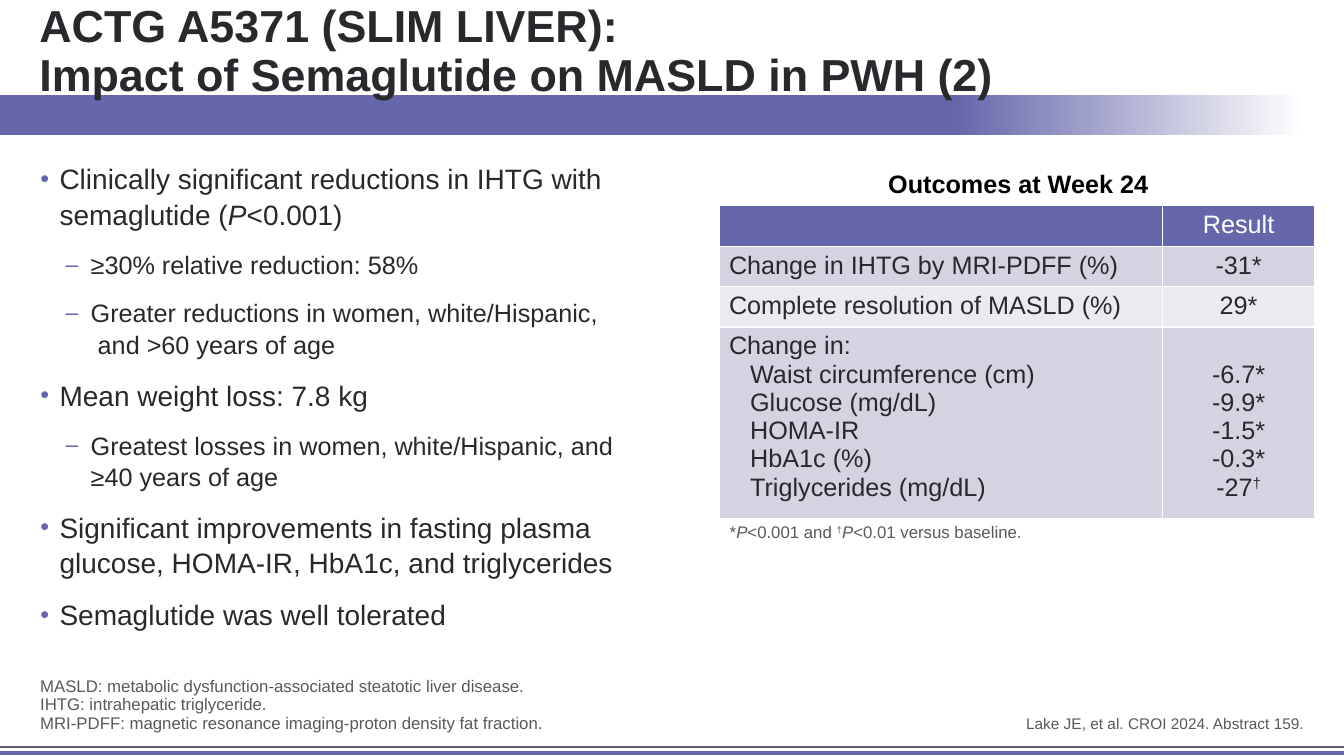
from dataclasses import dataclass
from typing import NamedTuple

from lxml import etree
from pptx import Presentation
from pptx.dml.color import RGBColor
from pptx.enum.shapes import MSO_CONNECTOR, MSO_SHAPE
from pptx.enum.text import MSO_ANCHOR, MSO_AUTO_SIZE, PP_ALIGN
from pptx.oxml.ns import qn
from pptx.util import Emu, Inches, Pt

LEFT, CENTER, RIGHT = PP_ALIGN.LEFT, PP_ALIGN.CENTER, PP_ALIGN.RIGHT
RECTANGLE, STRAIGHT = MSO_SHAPE.RECTANGLE, MSO_CONNECTOR.STRAIGHT
BOTTOM, TOP, NO_FIT = MSO_ANCHOR.BOTTOM, MSO_ANCHOR.TOP, MSO_AUTO_SIZE.NONE

WHITE = RGBColor(0xFF, 0xFF, 0xFF)
BLACK = RGBColor(0x00, 0x00, 0x00)
INK = RGBColor(0x29, 0x28, 0x2D)
GREY = RGBColor(0x59, 0x59, 0x59)
RULE_GREY = RGBColor(0x62, 0x5C, 0x60)
PURPLE = RGBColor(0x66, 0x67, 0xAB)
LILAC = RGBColor(0xD3, 0xD3, 0xE2)
PALE = RGBColor(0xEA, 0xEB, 0xF1)

FONT = "Arial"
WIDTH, HEIGHT = Inches(13.33), Inches(7.5)


class Box(NamedTuple):
    """Place and size in percent of the slide's width and height."""
    left: float
    top: float
    width: float
    height: float


class Span(NamedTuple):
    text: str
    italic: bool = False
    raised: bool = False


class Bullet(NamedTuple):
    level: int
    sign: str
    margin: float
    hang: float
    size: int


@dataclass(frozen=True)
class Style:
    size: int
    color: RGBColor = INK
    bold: bool = False
    align: PP_ALIGN = LEFT
    spacing: float = 1.0
    before: int = 0


@dataclass(frozen=True)
class Line:
    spans: tuple[Span, ...]
    bullet: Bullet | None = None
    indent: float = 0


def plain(text: str, bullet: Bullet | None = None, indent: float = 0) -> Line:
    return Line((Span(text),), bullet, indent)


P_VALUE, DAGGER = Span("P", italic=True), Span("†", raised=True)
MAIN = Bullet(0, "•", 0.19, 0.19, 20)
SUB = Bullet(1, "–", 0.5, 0.25, 18)

TITLE_BOX = Box(2.18, 0, 96.17, 14)
TITLE = [plain("ACTG A5371 (SLIM LIVER):\nImpact of Semaglutide on MASLD in PWH (2)")]
BODY_BOX = Box(2.25, 20.53, 46.96, 70.67)
BODY = [
    Line((Span("Clinically significant reductions in IHTG with semaglutide ("),
          P_VALUE, Span("<0.001)")), MAIN),
    plain("≥30% relative reduction: 58%", SUB),
    plain("Greater reductions in women, white/Hispanic,\n and >60 years of age", SUB),
    plain("Mean weight loss: 7.8 kg", MAIN),
    plain("Greatest losses in women, white/Hispanic, and ≥40 years of age", SUB),
    plain("Significant improvements in fasting plasma glucose, HOMA-IR, HbA1c, "
          "and triglycerides", MAIN),
    plain("Semaglutide was well tolerated", MAIN),
]

NOTE = Style(12, GREY, spacing=0.9)
TEXT_BOXES = [
    (Box(53.71, 22.27, 44.11, 4.8), Style(18, BLACK, True, CENTER, 0.85),
     [plain("Outcomes at Week 24")]),
    (Box(53.56, 68.67, 41.49, 3.73), NOTE,
     [Line((Span("*"), P_VALUE, Span("<0.001 and "), DAGGER, P_VALUE,
            Span("<0.01 versus baseline.")))]),
    (Box(2.25, 89.07, 41.49, 8.67), NOTE,
     [plain("MASLD: metabolic dysfunction-associated steatotic liver disease."),
      plain("IHTG: intrahepatic triglyceride."),
      plain("MRI-PDFF: magnetic resonance imaging-proton density fat fraction.")]),
    (Box(50, 94.13, 47.79, 3.6), Style(11, GREY, align=RIGHT, spacing=0.9),
     [plain("Lake JE, et al. CROI 2024. Abstract 159.")]),
]

TABLE_BOX = Box(53.49, 27.2, 44.33, 41.33)
COLUMN_WIDTHS = (33.01, 11.32)
ROW_HEIGHTS = (5.33, 5.33, 5.33, 25.33)
ROW_FILLS = (PURPLE, LILAC, PALE, LILAC)
MEASURES = ("Waist circumference (cm)", "Glucose (mg/dL)", "HOMA-IR", "HbA1c (%)",
            "Triglycerides (mg/dL)")
CHANGES = ("-6.7*", "-9.9*", "-1.5*", "-0.3*")
OUTCOMES = [
    ([], [plain("Result")]),
    ([plain("Change in IHTG by MRI-PDFF (%)")], [plain("-31*")]),
    ([plain("Complete resolution of MASLD (%)")], [plain("29*")]),
    ([plain("Change in:"), *(plain(name, indent=0.21) for name in MEASURES)],
     [*(plain(change) for change in CHANGES), Line((Span("-27"), DAGGER))]),
]
MARGIN_BELOW_HEADING = Inches(0.33)

BAND_BOX = Box(0, 12.53, 100, 5.33)
RULES = [(98.8, RULE_GREY, 1.75), (99.6, PURPLE, 3.25)]


def across(share: float) -> Emu:
    return Emu(round(WIDTH * share / 100))


def down(share: float) -> Emu:
    return Emu(round(HEIGHT * share / 100))


def place(box: Box) -> tuple[Emu, Emu, Emu, Emu]:
    return across(box.left), down(box.top), across(box.width), down(box.height)


def add_xml(parent, tag: str, **attributes: str):
    return etree.SubElement(parent, qn(tag), attributes)


def set_bullet(para, bullet: Bullet) -> None:
    para.level = bullet.level
    props = para._p.get_or_add_pPr()
    props.set("marL", str(Inches(bullet.margin)))
    props.set("indent", str(-Inches(bullet.hang)))
    add_xml(add_xml(props, "a:buClr"), "a:srgbClr", val=str(PURPLE))
    add_xml(props, "a:buSzPct", val="90000")
    add_xml(props, "a:buFont", typeface=FONT)
    add_xml(props, "a:buChar", char=bullet.sign)


def add_span(para, span: Span) -> None:
    for number, part in enumerate(span.text.split("\n")):
        if number:
            para.add_line_break()
        run = para.add_run()
        run.text = part
        if span.italic:
            run.font.italic = True
        if span.raised:
            run._r.get_or_add_rPr().set("baseline", "30000")


def write(frame, lines: list[Line], style: Style) -> None:
    for number, line in enumerate(lines):
        para = frame.add_paragraph() if number else frame.paragraphs[0]
        if line.bullet:
            set_bullet(para, line.bullet)
        elif line.indent:
            para._p.get_or_add_pPr().set("marL", str(Inches(line.indent)))
        para.alignment = style.align
        para.line_spacing = style.spacing
        para.space_before = Pt(style.before)
        para.font.name = FONT
        para.font.size = Pt(line.bullet.size if line.bullet else style.size)
        para.font.bold = style.bold
        para.font.color.rgb = style.color
        for span in line.spans:
            add_span(para, span)


def fill_placeholder(holder, box: Box, lines: list[Line], style: Style, anchor) -> None:
    holder.left, holder.top, holder.width, holder.height = place(box)
    frame = holder.text_frame
    frame.auto_size, frame.word_wrap = NO_FIT, True
    frame.vertical_anchor = anchor
    write(frame, lines, style)


def add_band(page) -> None:
    """Add the fading band behind the title."""
    band = page.shapes.add_shape(RECTANGLE, *place(BAND_BOX))
    band.shadow.inherit = False
    band.line.fill.background()
    band.fill.gradient()
    band.fill.gradient_angle = 180
    stops = ((0.03, WHITE), (0.29, PURPLE))
    for stop, (position, color) in zip(band.fill.gradient_stops, stops):
        stop.position, stop.color.rgb = position, color
    page.shapes._spTree.insert(2, band._element)


def add_rule(page, top: float, color: RGBColor, weight: float) -> None:
    rule = page.shapes.add_connector(STRAIGHT, 0, down(top), WIDTH, down(top))
    rule.line.color.rgb, rule.line.width = color, Pt(weight)
    add_xml(rule._element.spPr, "a:effectLst")


def style_cell(cell, fill: RGBColor) -> None:
    for side in ("a:lnL", "a:lnR", "a:lnT", "a:lnB"):
        border = add_xml(cell._tc.get_or_add_tcPr(), side, w=str(Pt(1)))
        add_xml(add_xml(border, "a:solidFill"), "a:srgbClr", val=str(WHITE))
    cell.fill.solid()
    cell.fill.fore_color.rgb = fill


def add_outcomes(page) -> None:
    table = page.shapes.add_table(len(OUTCOMES), 2, *place(TABLE_BOX)).table
    for column, width in zip(table.columns, COLUMN_WIDTHS):
        column.width = across(width)
    for number, (row, height) in enumerate(zip(table.rows, ROW_HEIGHTS)):
        row.height = down(height)
        color = INK if number else WHITE
        for cell, lines, align in zip(row.cells, OUTCOMES[number], (LEFT, CENTER)):
            style_cell(cell, ROW_FILLS[number])
            write(cell.text_frame, lines, Style(18, color, align=align))
    table.cell(len(OUTCOMES) - 1, 1).margin_top = MARGIN_BELOW_HEADING


def main() -> None:
    deck = Presentation()
    deck.slide_width, deck.slide_height = WIDTH, HEIGHT
    page = deck.slides.add_slide(deck.slide_layouts[1])
    add_band(page)
    for rule in RULES:
        add_rule(page, *rule)
    fill_placeholder(page.shapes.title, TITLE_BOX, TITLE,
                     Style(32, bold=True, spacing=0.9), BOTTOM)
    fill_placeholder(page.placeholders[1], BODY_BOX, BODY,
                     Style(20, spacing=1.05, before=12), TOP)
    add_outcomes(page)
    for box, style, lines in TEXT_BOXES:
        frame = page.shapes.add_textbox(*place(box)).text_frame
        frame.word_wrap = True
        write(frame, lines, style)
    deck.save("out.pptx")


if __name__ == "__main__":
    main()
